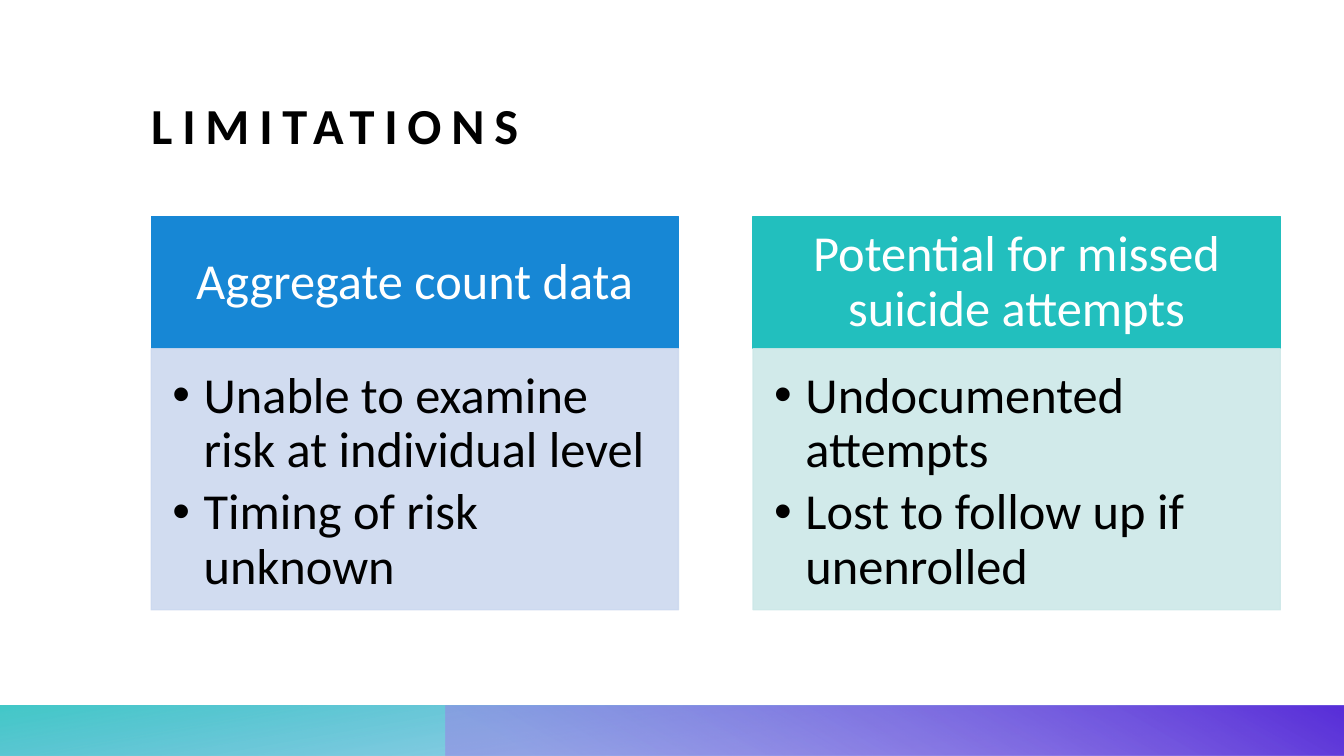
from dataclasses import dataclass

from lxml.etree import SubElement
from pptx import Presentation
from pptx.dml.color import RGBColor
from pptx.enum.shapes import MSO_SHAPE
from pptx.enum.text import MSO_ANCHOR, PP_ALIGN
from pptx.oxml.ns import qn
from pptx.util import Emu, Inches, Pt


@dataclass(frozen=True)
class Theme:
    font: str = "Calibri"
    size: int = 36
    ink: str = "000000"
    paper: str = "FFFFFF"
    blue: str = "1787D5"
    teal: str = "22BFBE"
    lilac: str = "9B82E8"
    violet: str = "592FD9"
    pale_blue: str = "CCD9EF"
    pale_teal: str = "CDE8E8"


@dataclass(frozen=True)
class Area:
    """A rectangle in percent of the slide's width and height."""
    left: float
    top: float
    width: float
    height: float

    def lengths(self) -> list[Emu]:
        sides = (WIDTH, HEIGHT, WIDTH, HEIGHT)
        shares = (self.left, self.top, self.width, self.height)
        return [Emu(round(side * share / 100)) for side, share in zip(sides, shares)]


@dataclass(frozen=True)
class Stop:
    position: float
    color: str
    opacity: int


@dataclass(frozen=True)
class Band:
    area: Area
    stops: tuple[Stop, Stop]
    clockwise_angle: int
    rotation: int


@dataclass(frozen=True)
class Card:
    heading: str
    points: tuple[str, ...]
    color: str
    pale: str


WIDTH, HEIGHT = Inches(13.33), Inches(7.5)
THEME = Theme()
MARGIN, CARD_WIDTH, CARD_PITCH = 11.25, 39.23, 44.78
CARD_TOP, HEADING_HEIGHT, BODY_HEIGHT = 28.67, 17.47, 34.53
BAND_TOP, BAND_HEIGHT, SPLIT = 93.33, 6.67, 33.13
INDENT = Inches(0.31)

BANDS = (
    Band(Area(0, BAND_TOP, 100, BAND_HEIGHT),
         (Stop(0.14, THEME.blue, 28), Stop(1, THEME.teal, 85)), 100, 180),
    Band(Area(SPLIT, BAND_TOP, 100 - SPLIT, BAND_HEIGHT),
         (Stop(0.09, THEME.lilac, 55), Stop(0.99, THEME.violet, 100)), 240, 0),
)
CARDS = (
    Card("Aggregate count data",
         ("Unable to examine risk at individual level", "Timing of risk unknown"),
         THEME.blue, THEME.pale_blue),
    Card("Potential for missed suicide attempts",
         ("Undocumented attempts", "Lost to follow up if unenrolled"),
         THEME.teal, THEME.pale_teal),
)


def apply(target, formats: dict) -> None:
    for name, value in formats.items():
        setattr(target, name, value)


def set_opacity(color_element, percent: int) -> None:
    SubElement(color_element, qn("a:alpha"), val=str(percent * 1000))


def set_frame(shape, anchor: MSO_ANCHOR, insets: tuple[float, ...]) -> None:
    """Wrap the text and set its left, top, right and bottom insets in inches."""
    left, top, right, bottom = map(Inches, insets)
    apply(shape.text_frame, {
        "word_wrap": True, "vertical_anchor": anchor, "margin_left": left,
        "margin_top": top, "margin_right": right, "margin_bottom": bottom})


def write(para, text: str, color: str, formats: dict, bold: bool = False):
    span = para.add_run()
    span.text = text
    apply(para, formats)
    apply(span.font, {"name": THEME.font, "size": Pt(THEME.size), "bold": bold})
    span.font.color.rgb = RGBColor.from_string(color)
    return span


def add_bullet(para) -> None:
    properties = para._p.get_or_add_pPr()
    apply_indent = {"marL": INDENT, "indent": -INDENT}
    for name, value in apply_indent.items():
        properties.set(name, str(int(value)))
    SubElement(properties, qn("a:buFont"), typeface="Arial")
    SubElement(properties, qn("a:buChar"), char="•")


def add_rectangle(page, area: Area):
    shape = page.shapes.add_shape(MSO_SHAPE.RECTANGLE, *area.lengths())
    shape.shadow.inherit = False
    return shape


def add_panel(page, area: Area, color: str, opacity: int = 100):
    panel = add_rectangle(page, area)
    panel.fill.solid()
    panel.line.width = Pt(1)
    for fill in (panel.fill, panel.line.fill):
        fill.solid()
        fill.fore_color.rgb = RGBColor.from_string(color)
    for element in panel.element.spPr.xpath(".//a:srgbClr"):
        set_opacity(element, opacity)
    return panel


def add_band(page, band: Band) -> None:
    shape = add_rectangle(page, band.area)
    shape.line.fill.background()
    shape.rotation = band.rotation
    shape.element.spPr.xfrm.set("flipH", "1")
    shape.fill.gradient()
    shape.fill.gradient_angle = 360 - band.clockwise_angle
    for target, stop in zip(shape.fill.gradient_stops, band.stops):
        target.position = stop.position
        target.color.rgb = RGBColor.from_string(stop.color)
    for element, stop in zip(shape.element.spPr.xpath(".//a:gs/a:srgbClr"), band.stops):
        set_opacity(element, stop.opacity)


def add_title(page, text: str) -> None:
    box = page.shapes.add_textbox(*Area(MARGIN, 2.53, 84, 18).lengths())
    set_frame(box, MSO_ANCHOR.BOTTOM, (0, 0, 0, 0))
    span = write(box.text_frame.paragraphs[0], text, THEME.ink,
                 {"alignment": PP_ALIGN.LEFT, "line_spacing": 0.9}, bold=True)
    span.font._element.set("spc", "700")


def add_card(page, card: Card, column: int) -> None:
    left = MARGIN + column * CARD_PITCH
    heading = add_panel(page, Area(left, CARD_TOP, CARD_WIDTH, HEADING_HEIGHT), card.color)
    set_frame(heading, MSO_ANCHOR.MIDDLE, (0.28, 0.16, 0.28, 0.16))
    write(heading.text_frame.paragraphs[0], card.heading, THEME.paper,
          {"alignment": PP_ALIGN.CENTER, "line_spacing": 0.9})

    body = add_panel(page, Area(left, CARD_TOP + HEADING_HEIGHT, CARD_WIDTH, BODY_HEIGHT),
                     card.pale, opacity=90)
    set_frame(body, MSO_ANCHOR.TOP, (0.21, 0.21, 0.28, 0.32))
    frame = body.text_frame
    for index, point in enumerate(card.points):
        para = frame.add_paragraph() if index else frame.paragraphs[0]
        add_bullet(para)
        write(para, point, THEME.ink, {"alignment": PP_ALIGN.LEFT, "line_spacing": 0.9,
                                       "space_after": Pt(5.4)})


def main() -> None:
    deck = Presentation()
    apply(deck, {"slide_width": WIDTH, "slide_height": HEIGHT})
    page = deck.slides.add_slide(deck.slide_layouts[6])
    page.background.fill.solid()
    page.background.fill.fore_color.rgb = RGBColor.from_string(THEME.paper)
    for band in BANDS:
        add_band(page, band)
    add_title(page, "LIMITATIONS")
    for column, card in enumerate(CARDS):
        add_card(page, card, column)
    deck.save("out.pptx")


if __name__ == "__main__":
    main()
